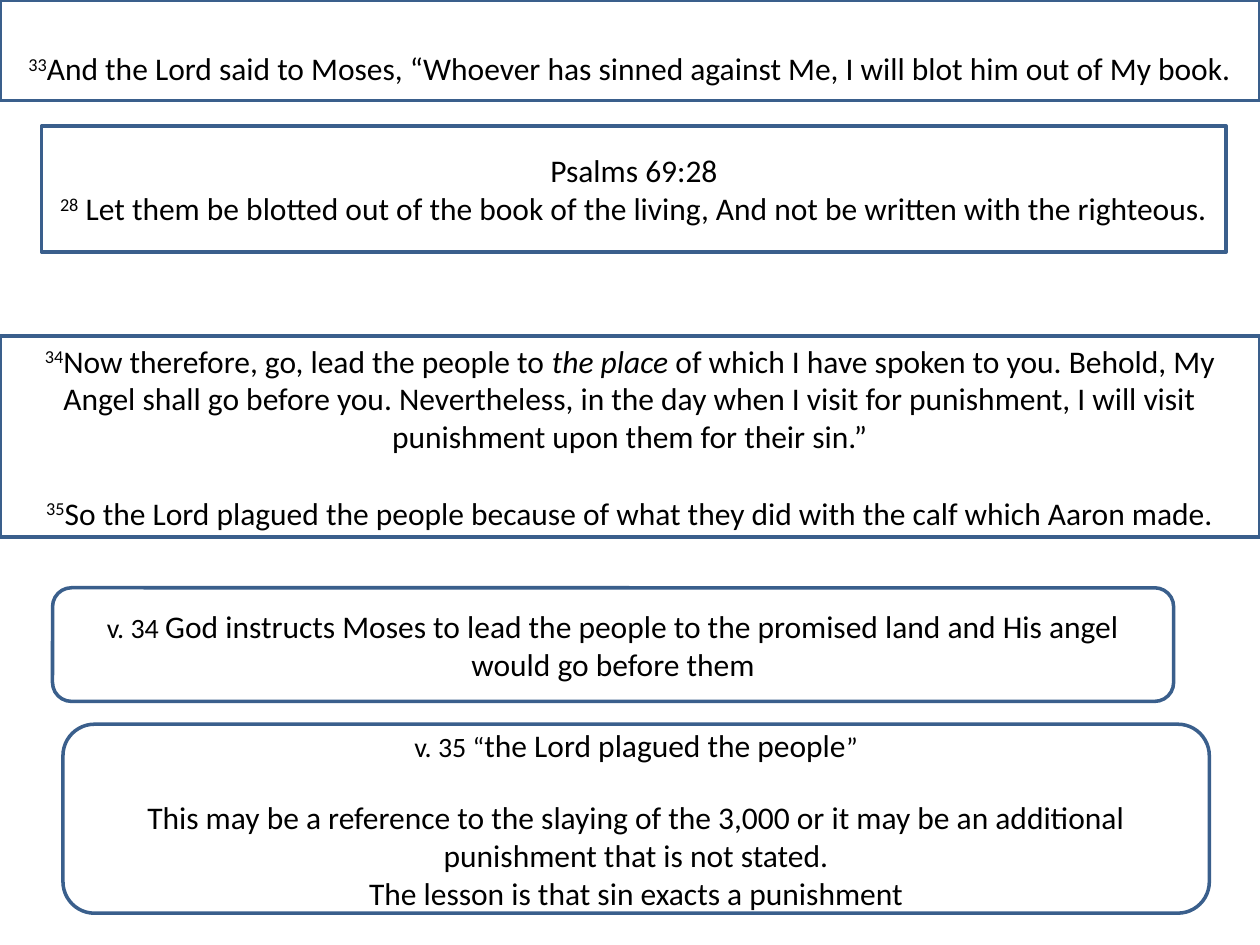
from dataclasses import dataclass

from pptx import Presentation
from pptx.dml.color import RGBColor as RGB
from pptx.enum.shapes import MSO_SHAPE as Shape
from pptx.enum.text import MSO_ANCHOR as Anchor, PP_ALIGN as Align
from pptx.util import Cm, Pt


@dataclass(frozen=True)
class Theme:
    font: str = "Calibri"
    body: float = 18
    small: float = 16
    text: RGB = RGB(0x00, 0x00, 0x00)
    fill: RGB = RGB(0xFF, 0xFF, 0xFF)
    border: RGB = RGB(0x3A, 0x5F, 0x8C)
    border_width: float = 2


THEME = Theme()
WIDTH, HEIGHT = 25.4, 19.05

# Content: each paragraph is (space before in points, [(text, style), ...])
VERSE_33 = [
    (0, [("33", "sup"),
         ("And the Lord said to Moses, “Whoever has sinned against Me, "
          "I will blot him out of My book.", "body")]),
]
PSALM = [
    (0, [("Psalms 69:28", "body")]),
    (0, [("28", "sup"),
         (" Let them be blotted out of the book of the living, "
          "And not be written with the righteous.", "body")]),
]
VERSES_34_35 = [
    (0, [("34", "sup"),
         ("Now therefore, go, lead the people to ", "body"),
         ("the place", "italic"),
         (" of which I have spoken to you. Behold, My Angel shall go before "
          "you. Nevertheless, in the day when I visit for punishment, I will "
          "visit punishment upon them for their sin.”", "body")]),
    (22, [("35", "sup"),
          ("So the Lord plagued the people because of what they did with "
           "the calf which Aaron made.", "body")]),
]
NOTE_34 = [
    (0, [("v. 34 ", "small"),
         ("God instructs Moses to lead the people to the promised land and "
          "His angel would go before them", "body")]),
]
NOTE_35 = [
    (0, [("v. 35 “", "small"),
         ("the Lord plagued the people", "body"),
         ("”", "small")]),
    (19.5, [("This may be a reference to the slaying of the 3,000 or it may be "
             "an additional punishment that is not stated.", "body")]),
    (0, [("The lesson is that sin exacts a punishment", "body")]),
]

# Boxes: outline, (left, top, width, height) in cm, anchor, paragraphs
BOXES = [
    (Shape.RECTANGLE, (0, 0, WIDTH, 2.03), Anchor.BOTTOM, VERSE_33),
    (Shape.RECTANGLE, (0.84, 2.54, 23.88, 2.54), Anchor.MIDDLE, PSALM),
    (Shape.RECTANGLE, (0, 6.77, WIDTH, 4.06), Anchor.MIDDLE, VERSES_34_35),
    (Shape.ROUNDED_RECTANGLE, (1.06, 11.85, 22.6, 2.29), Anchor.MIDDLE, NOTE_34),
    (Shape.ROUNDED_RECTANGLE, (1.27, 14.6, 23.11, 3.81), Anchor.MIDDLE, NOTE_35),
]
BOTTOM_INSET = 0.28  # used by bottom-anchored text


def add_run(p, text, style):
    r = p.add_run()
    r.text = text
    f = r.font
    f.name = THEME.font
    f.size = Pt(THEME.small if style == "small" else THEME.body)
    f.color.rgb = THEME.text
    if style == "italic":
        f.italic = True
    if style == "sup":
        r._r.get_or_add_rPr().set("baseline", "30000")


def add_box(s, outline, frame, anchor, paragraphs):
    sp = s.shapes.add_shape(outline, *(Cm(v) for v in frame))
    sp.shadow.inherit = False
    sp.fill.solid()
    sp.fill.fore_color.rgb = THEME.fill
    sp.line.color.rgb = THEME.border
    sp.line.width = Pt(THEME.border_width)

    tf = sp.text_frame
    tf.word_wrap = True
    tf.vertical_anchor = anchor
    if anchor == Anchor.BOTTOM:
        tf.margin_bottom = Cm(BOTTOM_INSET)
    for i, (gap, runs) in enumerate(paragraphs):
        p = tf.add_paragraph() if i else tf.paragraphs[0]
        p.alignment = Align.CENTER
        p.space_before = Pt(gap)
        for text, style in runs:
            add_run(p, text, style)


def main():
    prs = Presentation()
    prs.slide_width, prs.slide_height = Cm(WIDTH), Cm(HEIGHT)
    s = prs.slides.add_slide(prs.slide_layouts[6])
    for box in BOXES:
        add_box(s, *box)
    prs.save("out.pptx")


if __name__ == "__main__":
    main()
